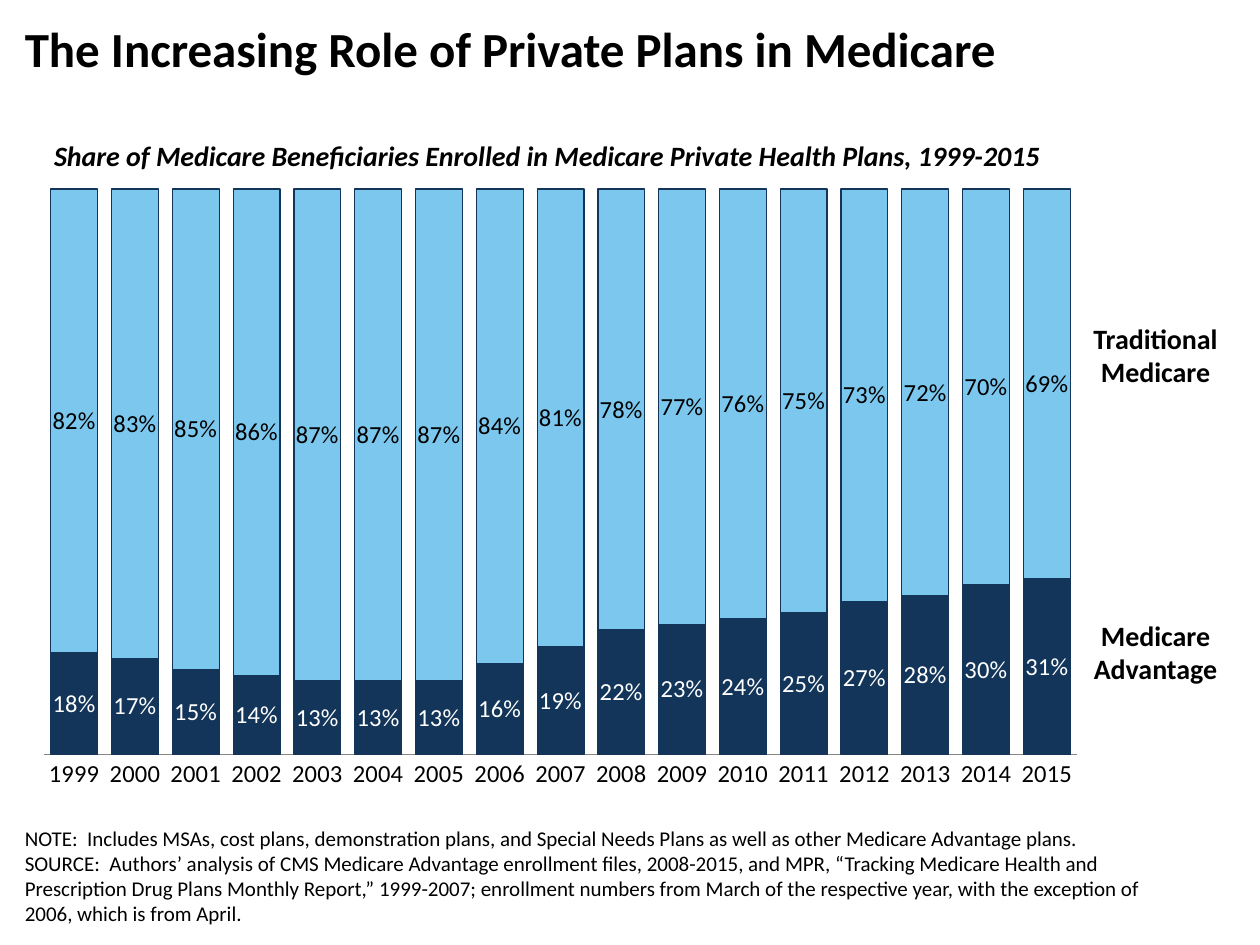
import pptx
import pptx.chart.data
import pptx.dml.color
import pptx.enum.chart
import pptx.enum.text
import pptx.oxml
import pptx.oxml.ns
import pptx.util
from pptx.util import Cm

FONT = "Calibri"
BLACK, WHITE, NAVY, SKY, GRAY = "000000", "FFFFFF", "133559", "7BC7ED", "868686"

YEARS = [str(year) for year in range(1999, 2016)]
ADVANTAGE_PERCENT = [18, 17, 15, 14, 13, 13, 13, 16, 19, 22, 23, 24, 25, 27, 28, 30, 31]

NOTES = [
    "NOTE:  Includes MSAs, cost plans, demonstration plans, and Special Needs Plans "
    "as well as other Medicare Advantage plans.",
    "SOURCE:  Authors’ analysis of CMS Medicare Advantage enrollment files, 2008-2015, "
    "and MPR, “Tracking Medicare Health and Prescription Drug Plans Monthly Report,” "
    "1999-2007; enrollment numbers from March of the respective year, with the "
    "exception of 2006, which is from April.",
]


def rgb(color):
    return pptx.dml.color.RGBColor.from_string(color)


def set_font(font, size, color=BLACK, bold=False, italic=False):
    font.name = FONT
    font.size = pptx.util.Pt(size)
    font.color.rgb = rgb(color)
    font.bold = bold
    font.italic = italic


def add_text(s, box, paragraphs, size, bold=False, italic=False, align="LEFT", anchor="TOP"):
    """Add a wrapped text box; box is left, top, width, height in centimetres."""
    tf = s.shapes.add_textbox(*map(Cm, box)).text_frame
    tf.word_wrap = True
    tf.vertical_anchor = pptx.enum.text.MSO_ANCHOR[anchor]
    tf.text = "\n".join(paragraphs)
    for p in tf.paragraphs:
        p.alignment = pptx.enum.text.PP_ALIGN[align]
        for r in p.runs:
            set_font(r.font, size, BLACK, bold, italic)


def set_plot_layout(chart, x, y, w, h):
    """Fix the inner plot area as fractions of the chart frame."""
    modes = "".join(f'<c:{name}Mode val="edge"/>' for name in "xy")
    sizes = "".join(f'<c:{name} val="{value}"/>' for name, value in zip("xywh", (x, y, w, h)))
    layout = pptx.oxml.parse_xml(
        f'<c:layout {pptx.oxml.ns.nsdecls("c")}><c:manualLayout>'
        f'<c:layoutTarget val="inner"/>{modes}{sizes}</c:manualLayout></c:layout>'
    )
    plot_area = chart._chartSpace.chart.plotArea
    for old in plot_area.findall(pptx.oxml.ns.qn("c:layout")):
        plot_area.remove(old)
    plot_area.insert(0, layout)


def style_series(series, fill, label_color):
    series.format.fill.solid()
    series.format.fill.fore_color.rgb = rgb(fill)
    series.format.line.color.rgb = rgb(NAVY)
    series.format.line.width = pptx.util.Pt(0.75)
    labels = series.data_labels
    labels.show_value = True
    labels.number_format = "0%"
    labels.number_format_is_linked = False
    labels.position = pptx.enum.chart.XL_LABEL_POSITION.CENTER
    set_font(labels.font, 14, label_color)


def style_axes(chart):
    years = chart.category_axis
    years.major_tick_mark = pptx.enum.chart.XL_TICK_MARK.NONE
    years.has_major_gridlines = False
    years.format.line.color.rgb = rgb(GRAY)
    set_font(years.tick_labels.font, 14)
    share = chart.value_axis
    share.has_major_gridlines = False
    share.minimum_scale, share.maximum_scale = 0, 1
    share.tick_labels.number_format = "0%"
    share.tick_labels.number_format_is_linked = False
    share.visible = False


def add_enrollment_chart(s, box):
    data = pptx.chart.data.CategoryChartData(number_format="0%")
    data.categories = YEARS
    data.add_series("Medicare Advantage", [n / 100 for n in ADVANTAGE_PERCENT])
    data.add_series("Traditional Medicare", [(100 - n) / 100 for n in ADVANTAGE_PERCENT])
    kind = pptx.enum.chart.XL_CHART_TYPE.COLUMN_STACKED_100
    chart = s.shapes.add_chart(kind, *map(Cm, box), data).chart
    chart.has_legend = False
    chart.has_title = False
    set_font(chart.font, 18)
    plot = chart.plots[0]
    plot.gap_width = 30
    plot.overlap = 100
    plot.vary_by_categories = False
    for series, fill, label_color in zip(plot.series, (NAVY, SKY), (WHITE, BLACK)):
        style_series(series, fill, label_color)
    style_axes(chart)
    set_plot_layout(chart, 0.01, 0.12, 0.85, 0.79)


def main():
    prs = pptx.Presentation()
    prs.slide_width, prs.slide_height = Cm(25.4), Cm(19.05)
    s = prs.slides.add_slide(prs.slide_layouts[6])

    add_enrollment_chart(s, (0.64, 2.08, 24.51, 14.43))
    add_text(s, (0.25, 17.27, 23.11, 1.52), NOTES, 12, anchor="BOTTOM")
    add_text(s, (0.25, 0.25, 24.89, 2.54),
             ["The Increasing Role of Private Plans in Medicare"], 28, bold=True)
    for label, top in (("Medicare Advantage", 12.34), ("Traditional Medicare", 6.35)):
        add_text(s, (21.39, top, 3.81, 1.63), [label], 16, bold=True, align="CENTER")
    add_text(s, (0.84, 2.67, 21.39, 0.94),
             ["Share of Medicare Beneficiaries Enrolled in Medicare Private Health Plans, 1999-2015"],
             16, bold=True, italic=True)

    prs.save("out.pptx")


if __name__ == "__main__":
    main()
